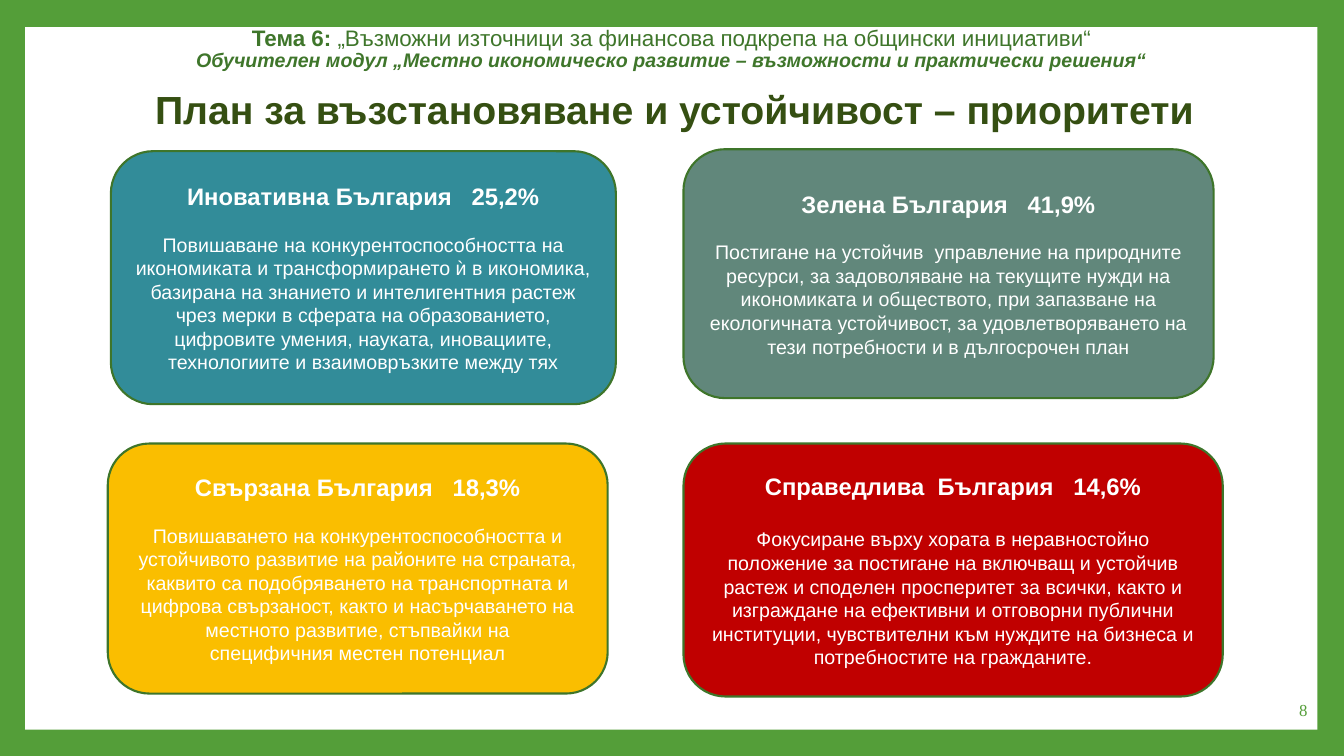
from pptx import Presentation
from pptx.dml.color import RGBColor
from pptx.enum.shapes import MSO_SHAPE
from pptx.enum.text import MSO_ANCHOR, PP_ALIGN
from pptx.util import Pt

RECTANGLE = MSO_SHAPE.RECTANGLE
ROUNDED_RECTANGLE = MSO_SHAPE.ROUNDED_RECTANGLE
TOP, MIDDLE = MSO_ANCHOR.TOP, MSO_ANCHOR.MIDDLE
CENTER, RIGHT = PP_ALIGN.CENTER, PP_ALIGN.RIGHT

WHITE = RGBColor(0xFF, 0xFF, 0xFF)
FRAME_GREEN = RGBColor(0x54, 0x9E, 0x39)
OUTLINE_GREEN = RGBColor(0x3E, 0x75, 0x2A)
HEADER_GREEN = RGBColor(0x3F, 0x76, 0x2B)
TITLE_GREEN = RGBColor(0x35, 0x4F, 0x12)
TEAL = RGBColor(0x32, 0x8C, 0x99)
SAGE = RGBColor(0x61, 0x87, 0x7B)
YELLOW = RGBColor(0xFA, 0xBE, 0x00)
RED = RGBColor(0xC0, 0x00, 0x00)

# Box in points, fill, heading, gap below the heading, body paragraphs
PRIORITIES = [
    ((79.2, 108, 360.7, 180.7), TEAL, "Иновативна България   25,2%", 16,
     ["Повишаване на конкурентоспособността на икономиката и трансформирането ѝ "
      "в икономика, базирана на знанието и интелигентния растеж чрез мерки в "
      "сферата на образованието, цифровите умения, науката, иновациите, "
      "технологиите и взаимовръзките между тях"]),
    ((488.2, 106.6, 378.7, 177.8), SAGE, "Зелена България   41,9%", 16,
     ["Постигане на устойчив  управление на природните ресурси, за задоволяване "
      "на текущите нужди на икономиката и обществото, при запазване на "
      "екологичната устойчивост, за удовлетворяването на тези потребности и в "
      "дългосрочен план"]),
    ((77, 316.8, 357.1, 178.6), YELLOW, "Свързана България   18,3%", 16,
     ["Повишаването на конкурентоспособността и устойчивото развитие на районите "
      "на страната, каквито са подобряването на транспортната и цифрова "
      "свързаност, както и насърчаването на местното развитие, стъпвайки на",
      "специфичния местен потенциал"]),
    ((488.2, 316.8, 385.2, 180.7), RED, "Справедлива  България   14,6%", 19.5,
     ["Фокусиране върху хората в неравностойно положение за постигане на включващ "
      "и устойчив растеж и споделен просперитет за всички, както и изграждане на "
      "ефективни и отговорни публични институции, чувствителни към нуждите на "
      "бизнеса и потребностите на гражданите."]),
]


def add_paragraph(frame, first=False, align=CENTER, space_before=0, line_spacing=1.0):
    paragraph = frame.paragraphs[0] if first else frame.add_paragraph()
    paragraph.alignment = align
    paragraph.space_before = Pt(space_before)
    paragraph.line_spacing = line_spacing
    return paragraph


def add_run(paragraph, text, size, color, bold=False, italic=False, font="Arial"):
    run = paragraph.add_run()
    run.text = text
    run.font.name = font
    run.font.size = Pt(size)
    run.font.color.rgb = color
    run.font.bold = bold
    run.font.italic = italic


def add_panel(slide, kind, box, fill, outline=None):
    shape = slide.shapes.add_shape(kind, *map(Pt, box))
    shape.shadow.inherit = False
    shape.fill.solid()
    shape.fill.fore_color.rgb = fill
    if outline is None:
        shape.line.fill.background()
    else:
        shape.line.color.rgb = outline
        shape.line.width = Pt(1.5)
    return shape


def add_text_frame(slide, box, anchor):
    frame = slide.shapes.add_textbox(*map(Pt, box)).text_frame
    frame.word_wrap = True
    frame.vertical_anchor = anchor
    return frame


def add_header(slide):
    frame = add_text_frame(slide, (26.6, 10.8, 906.5, 49), MIDDLE)
    topic = add_paragraph(frame, first=True, line_spacing=0.9)
    add_run(topic, "Тема 6: ", 16, HEADER_GREEN, bold=True)
    add_run(topic, "„Възможни източници за финансова подкрепа на общински инициативи“",
            16, HEADER_GREEN)
    module = add_paragraph(frame, line_spacing=0.9)
    add_run(module, "Обучителен модул „Местно икономическо развитие – възможности и "
            "практически решения“", 14, HEADER_GREEN, bold=True, italic=True)


def add_title(slide):
    frame = add_text_frame(slide, (99, 57.6, 765.4, 41), TOP)
    add_run(add_paragraph(frame, first=True),
            "План за възстановяване и устойчивост – приоритети", 28, TITLE_GREEN, bold=True)


def add_page_number(slide):
    frame = add_text_frame(slide, (806.4, 492.5, 134.6, 28.8), MIDDLE)
    add_run(add_paragraph(frame, first=True, align=RIGHT), "8", 12, FRAME_GREEN,
            font="Times New Roman")


def add_priority(slide, box, fill, heading, gap, body):
    frame = add_panel(slide, ROUNDED_RECTANGLE, box, fill, OUTLINE_GREEN).text_frame
    frame.word_wrap = True
    frame.vertical_anchor = MIDDLE
    add_run(add_paragraph(frame, first=True), heading, 17, WHITE, bold=True)
    for index, text in enumerate(body):
        paragraph = add_paragraph(frame, space_before=0 if index else gap)
        add_run(paragraph, text, 14, WHITE)


def main():
    presentation = Presentation()
    presentation.slide_width = Pt(960)
    presentation.slide_height = Pt(540)
    slide = presentation.slides.add_slide(presentation.slide_layouts[6])
    slide.background.fill.solid()
    slide.background.fill.fore_color.rgb = FRAME_GREEN

    add_panel(slide, RECTANGLE, (18, 19.4, 923, 501.9), WHITE)
    add_page_number(slide)
    add_title(slide)
    for priority in PRIORITIES:
        add_priority(slide, *priority)
    add_header(slide)
    presentation.save("out.pptx")


if __name__ == "__main__":
    main()
